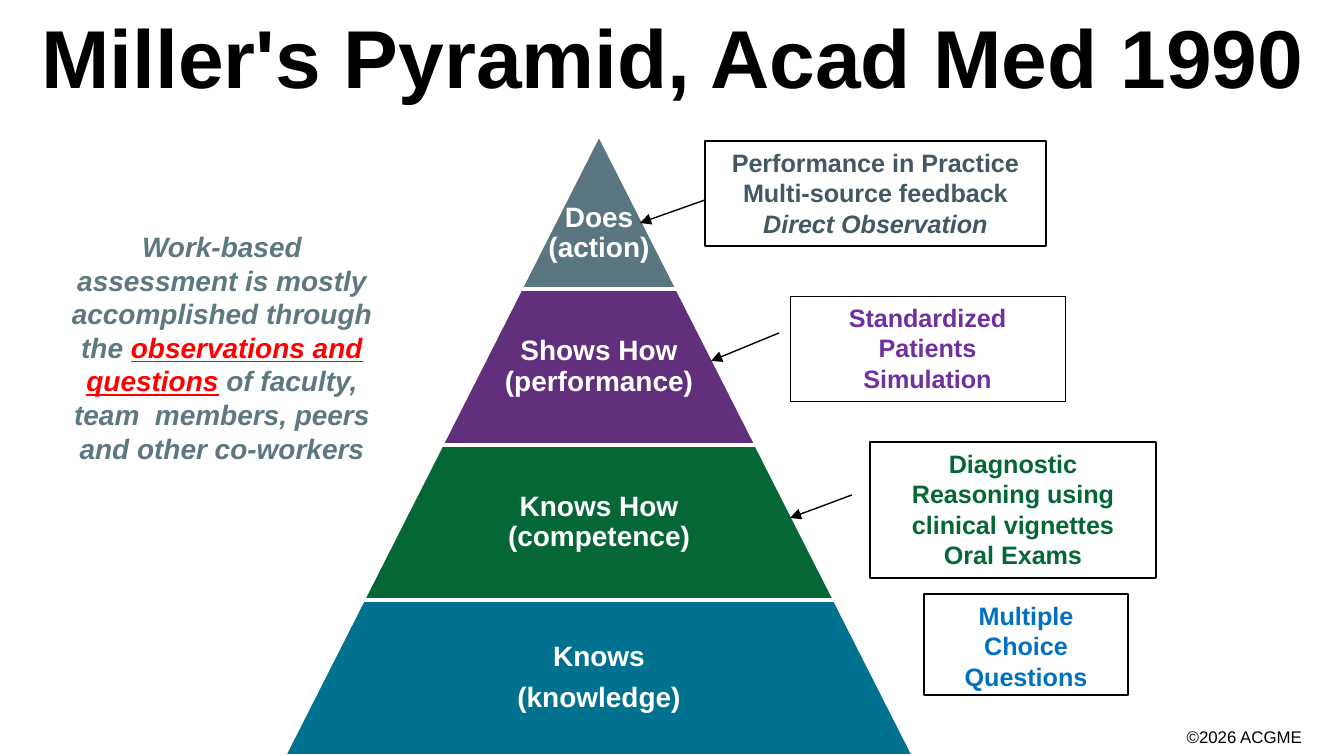
from pptx import Presentation
from pptx.dml.color import RGBColor
from pptx.enum.shapes import MSO_CONNECTOR as Link, MSO_SHAPE as Kind
from pptx.enum.text import MSO_ANCHOR as Anchor, PP_ALIGN as Align
from pptx.oxml.ns import qn
from pptx.util import Emu, Pt
from lxml.etree import SubElement

SCALE = 914400 / 134.4
FONT = "Arial"
BLACK, WHITE, SLATE, RED = "000000", "FFFFFF", "5D7880", "FF0000"

# Pyramid: centre, top, whole height and base width
MID, TOP, HIGH, BASE = 599, 134, 622, 630
# Fill, text width, text shift down, paragraphs
TIERS = [
    ("5A7681", 157, 22, ["Does (action)"]),
    ("622F7C", 204, 0, ["Shows How (performance)"]),
    ("056735", 306, 0, ["Knows How (competence)"]),
    ("00728F", 410, 0, ["Knows", "(knowledge)"]),
]
# Place, line width, text colour, paragraphs of (text, italic)
METHODS = [
    ((705, 141, 341, 105), 0.75, "445861",
     [("Performance in Practice", False), ("Multi-source feedback", False),
      ("Direct Observation", True)]),
    ((790, 296, 275, 105), 0.25, "7030A0",
     [("Standardized Patients", False), ("Simulation", False)]),
    ((870, 442, 286, 136), 0.75, "056735",
     [("Diagnostic Reasoning using clinical vignettes", False),
      ("Oral Exams", False)]),
    ((924, 594, 204, 101), 1, "0070C0", [("Multiple Choice Questions", False)]),
]
ARROWS = [(705, 200, 640, 223), (779, 333, 711, 361), (852, 495, 790, 518)]


def px(n):
    return Emu(round(n * SCALE))


def rgb(code):
    return RGBColor.from_string(code)


def add_run(para, text, size, color, bold=True, italic=False, under=False):
    run = para.add_run()
    run.text = text
    font = run.font
    font.name, font.size = FONT, Pt(size)
    font.bold, font.italic, font.underline = bold, italic, under
    font.color.rgb = rgb(color)


def add_para(frame, first, align=Align.CENTER):
    para = frame.paragraphs[0] if first else frame.add_paragraph()
    para.alignment = align
    return para


def add_box(slide, place, anchor=Anchor.TOP, inset=None, wrap=True):
    frame = slide.shapes.add_textbox(*map(px, place)).text_frame
    frame.word_wrap = wrap
    frame.vertical_anchor = anchor
    if inset is not None:
        frame.margin_left = frame.margin_right = px(inset)
        frame.margin_top = frame.margin_bottom = px(inset)
    return frame


def add_block(slide, kind, place, fill, line, width):
    shape = slide.shapes.add_shape(kind, *map(px, place))
    shape.shadow.inherit = False
    if fill:
        shape.fill.solid()
        shape.fill.fore_color.rgb = rgb(fill)
    else:
        shape.fill.background()
    shape.line.color.rgb = rgb(line)
    shape.line.width = Pt(width)
    return shape


def add_title(slide, text):
    title = slide.shapes.title
    title.left, title.top, title.width, title.height = map(px, (3, 18, 1341, 75))
    frame = title.text_frame
    frame.word_wrap = True
    frame.vertical_anchor = Anchor.MIDDLE
    add_run(add_para(frame, True), text, 44, BLACK)


def add_tier(slide, i, fill, wide, shift, lines):
    top = TOP + HIGH * i // 4
    high = TOP + HIGH * (i + 1) // 4 - top
    base = BASE * (i + 1) // 4
    tier = add_block(slide, Kind.TRAPEZOID, (MID - base / 2, top, base, high),
                     fill, WHITE, 2)
    tier.adjustments[0] = 0.507
    frame = add_box(slide, (MID - wide / 2, top + shift, wide, high),
                    Anchor.MIDDLE, 3)
    for n, text in enumerate(lines):
        para = add_para(frame, n == 0)
        para.line_spacing = 0.9
        para.space_after = Pt(6)
        add_run(para, text, 15, WHITE)


def add_method(slide, place, width, color, lines):
    frame = add_block(slide, Kind.RECTANGLE, place, None, BLACK, width).text_frame
    frame.word_wrap = True
    frame.vertical_anchor = Anchor.TOP
    for n, (text, italic) in enumerate(lines):
        add_run(add_para(frame, n == 0), text, 13.5, color, italic=italic)


def add_arrow(slide, ends):
    arrow = slide.shapes.add_connector(Link.STRAIGHT, *map(px, ends))
    arrow.line.color.rgb = rgb(BLACK)
    arrow.line.width = Pt(0.75)
    SubElement(arrow.line._get_or_add_ln(), qn("a:tailEnd"), type="triangle")
    SubElement(arrow._element.spPr, qn("a:effectLst"))


def add_note(slide):
    para = add_para(add_box(slide, (46, 223, 352, 251)), True)
    for text, color, under in [
        ("Work-based assessment is mostly accomplished through the ", SLATE, False),
        ("observations and questions", RED, True),
        (" of faculty, team  members, peers and other co-workers", SLATE, False),
    ]:
        add_run(para, text, 15, color, italic=True, under=under)


def add_footer(slide):
    frame = add_box(slide, (1171, 720, 144, 34), wrap=False)
    add_run(add_para(frame, True, Align.RIGHT), "©2026 ACGME", 9, BLACK, bold=False)


def main():
    deck = Presentation()
    deck.slide_width, deck.slide_height = px(1344), px(756)
    slide = deck.slides.add_slide(deck.slide_layouts[5])
    add_footer(slide)
    add_title(slide, "Miller's Pyramid, Acad Med 1990")
    # Pyramid with the ways to assess each tier
    for i, tier in enumerate(TIERS):
        add_tier(slide, i, *tier)
    for method in METHODS:
        add_method(slide, *method)
    for ends in ARROWS:
        add_arrow(slide, ends)
    # Remark at the left
    add_note(slide)
    deck.save("out.pptx")


if __name__ == "__main__":
    main()
